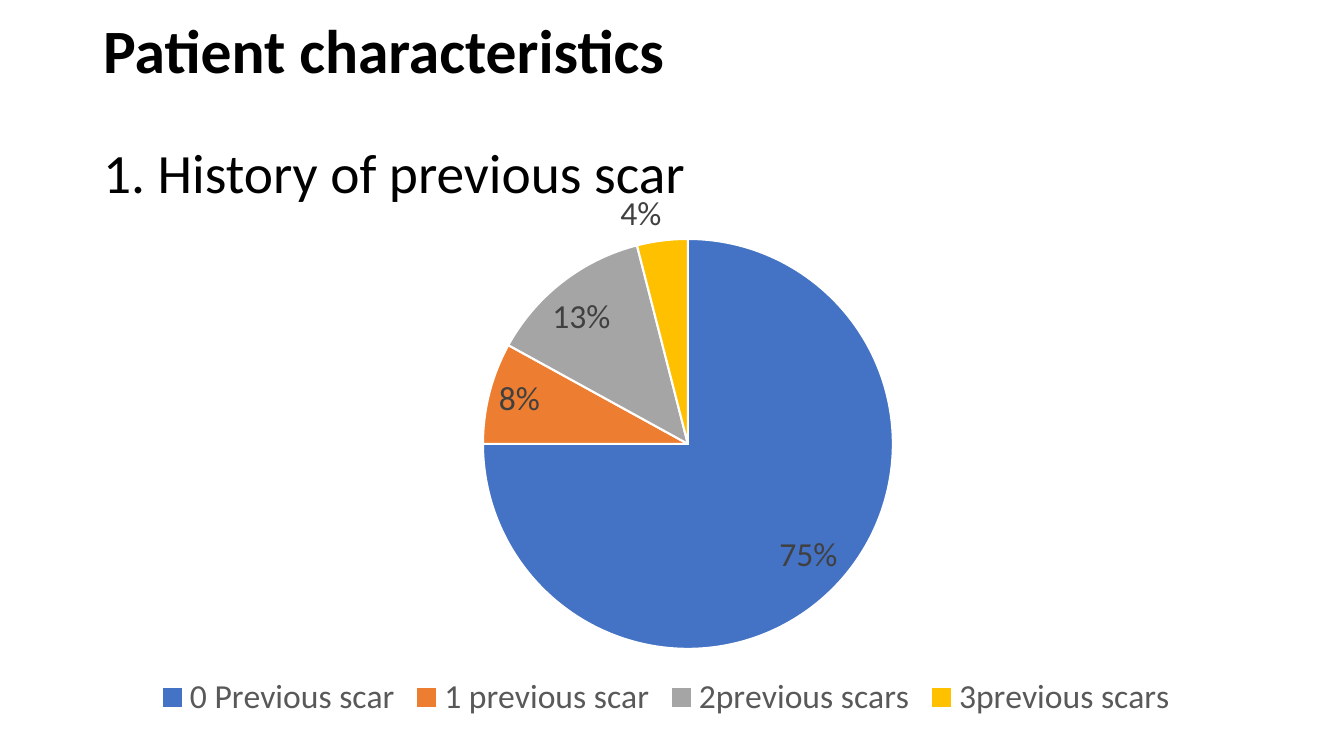
from pptx import Presentation
from pptx import util as u
from pptx.chart.data import CategoryChartData
from pptx.dml.color import RGBColor
from pptx.enum import chart as ch, text
from pptx.oxml import parse_xml
from pptx.oxml.ns import nsdecls

COLORS = {
    "text": "000000", "legend": "595959", "label": "404040", "edge": "FFFFFF",
    "blue": "4472C4", "orange": "ED7D31", "grey": "A5A5A5", "gold": "FFC000",
}
SCARS = [
    ("0 Previous scar", 75, "blue"),
    ("1 previous scar", 8, "orange"),
    ("2previous scars", 13, "grey"),
    ("3previous scars", 4, "gold"),
]


def px(n):
    return u.Emu(round(n * 914400 / 100.8))


def rgb(name):
    return RGBColor.from_string(COLORS[name])


class Deck:
    font = "Calibri"

    def __init__(self, width, height):
        self.prs = Presentation()
        self.prs.slide_width, self.prs.slide_height = px(width), px(height)
        self.s = self.prs.slides.add_slide(self.prs.slide_layouts[5])

    def style(self, font, size, color, bold=False):
        font.name, font.size, font.bold = self.font, u.Pt(size), bold
        font.color.rgb = rgb(color)

    def title(self, box, lines, gap):
        sp = self.s.shapes.title
        sp.left, sp.top, sp.width, sp.height = map(px, box)
        tf = sp.text_frame
        tf.text = "\n".join(line for line, _, _ in lines)
        tf.word_wrap = True
        tf.auto_size = text.MSO_AUTO_SIZE.NONE
        tf.vertical_anchor = text.MSO_ANCHOR.MIDDLE
        for i, (p, (_, size, bold)) in enumerate(zip(tf.paragraphs, lines)):
            p.alignment = text.PP_ALIGN.LEFT
            p.line_spacing = 0.9
            p.space_before = u.Pt(gap if i else 0)
            self.style(p.runs[0].font, size, "text", bold)

    def pie(self, box, plot_box, rows, size):
        data = CategoryChartData()
        data.categories = [name for name, _, _ in rows]
        data.add_series("Series 1", [value for _, value, _ in rows])
        chart = self.s.shapes.add_chart(ch.XL_CHART_TYPE.PIE, *map(px, box), data).chart
        chart.has_title = False
        self.style(chart.font, size, "text")

        # Legend
        chart.has_legend = True
        chart.legend.position = ch.XL_LEGEND_POSITION.BOTTOM
        chart.legend.include_in_layout = False
        self.style(chart.legend.font, size, "legend")

        # Slices
        plot = chart.plots[0]
        plot.vary_by_categories = True
        for i, (_, _, color) in enumerate(rows):
            fmt = plot.series[0].points[i].format
            fmt.fill.solid()
            fmt.fill.fore_color.rgb = rgb(color)
            fmt.line.color.rgb = rgb("edge")
            fmt.line.width = u.Pt(1.5)

        # Percent labels
        labels = plot.series[0].data_labels
        labels.show_value = False
        labels.show_percentage = True
        labels.number_format, labels.number_format_is_linked = "0%", False
        labels.position = ch.XL_LABEL_POSITION.BEST_FIT
        self.style(labels.font, size, "label")

        # Plot area as fractions of the chart frame
        left, top, width, height = box
        x, y, w, h = plot_box
        parts = {"x": (x - left) / width, "y": (y - top) / height,
                 "w": w / width, "h": h / height}
        layout = parse_xml(
            f'<c:layout {nsdecls("c")}><c:manualLayout><c:layoutTarget val="inner"/>'
            '<c:xMode val="edge"/><c:yMode val="edge"/>'
            + "".join(f'<c:{k} val="{v:.4f}"/>' for k, v in parts.items())
            + "</c:manualLayout></c:layout>")
        area = chart.element.chart.plotArea
        for old in area.findall(layout.tag):
            area.remove(old)
        area.insert(0, layout)


deck = Deck(1344, 756)

# Heading
deck.title((93, 40, 1159, 146),
           [("Patient characteristics", 44, True),
            ("1. History of previous scar", 39.6, False)], gap=42)

# Scar history chart
deck.pie((40, 178, 1252, 547), (483, 239, 410, 410), SCARS, 24)

deck.prs.save("out.pptx")
